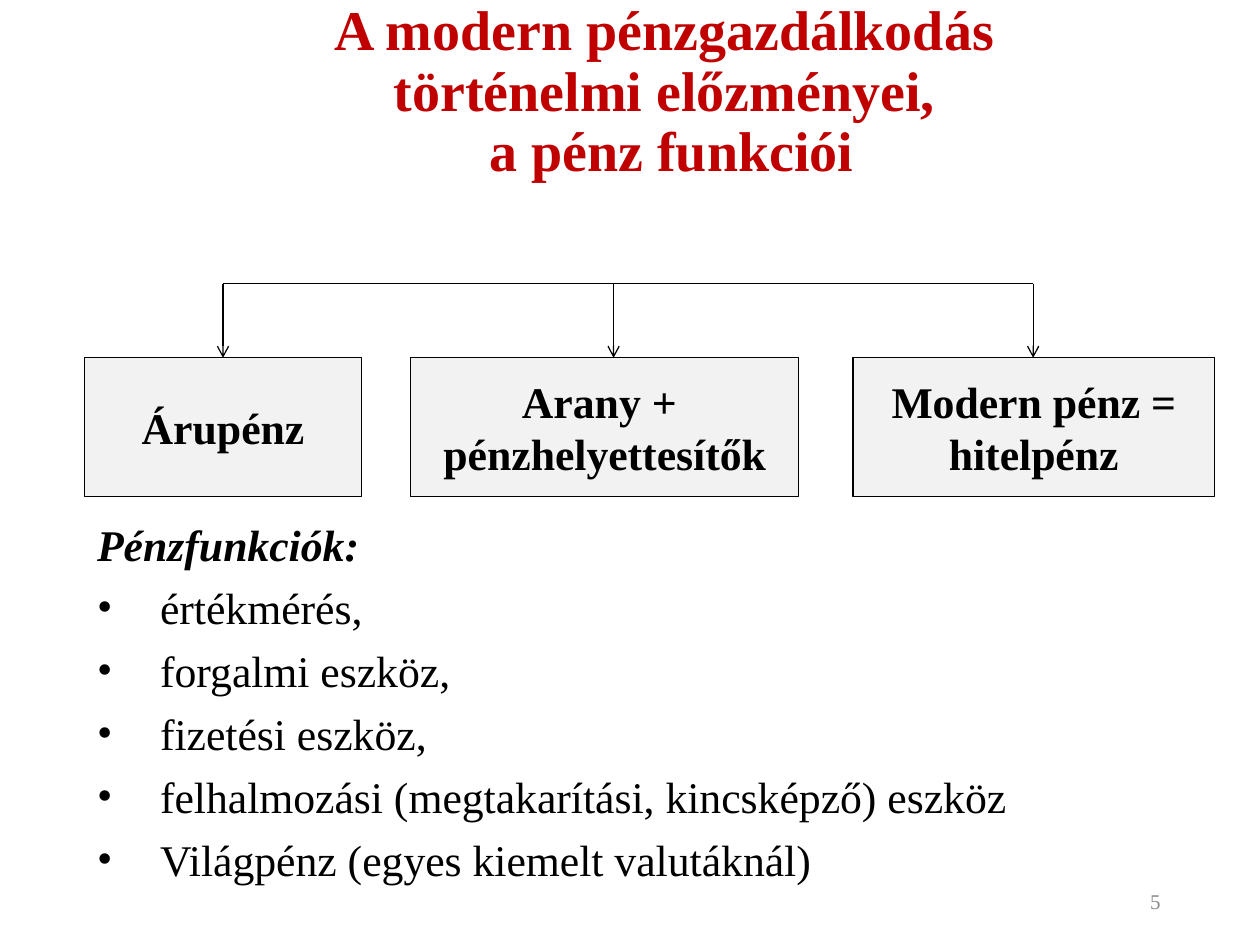
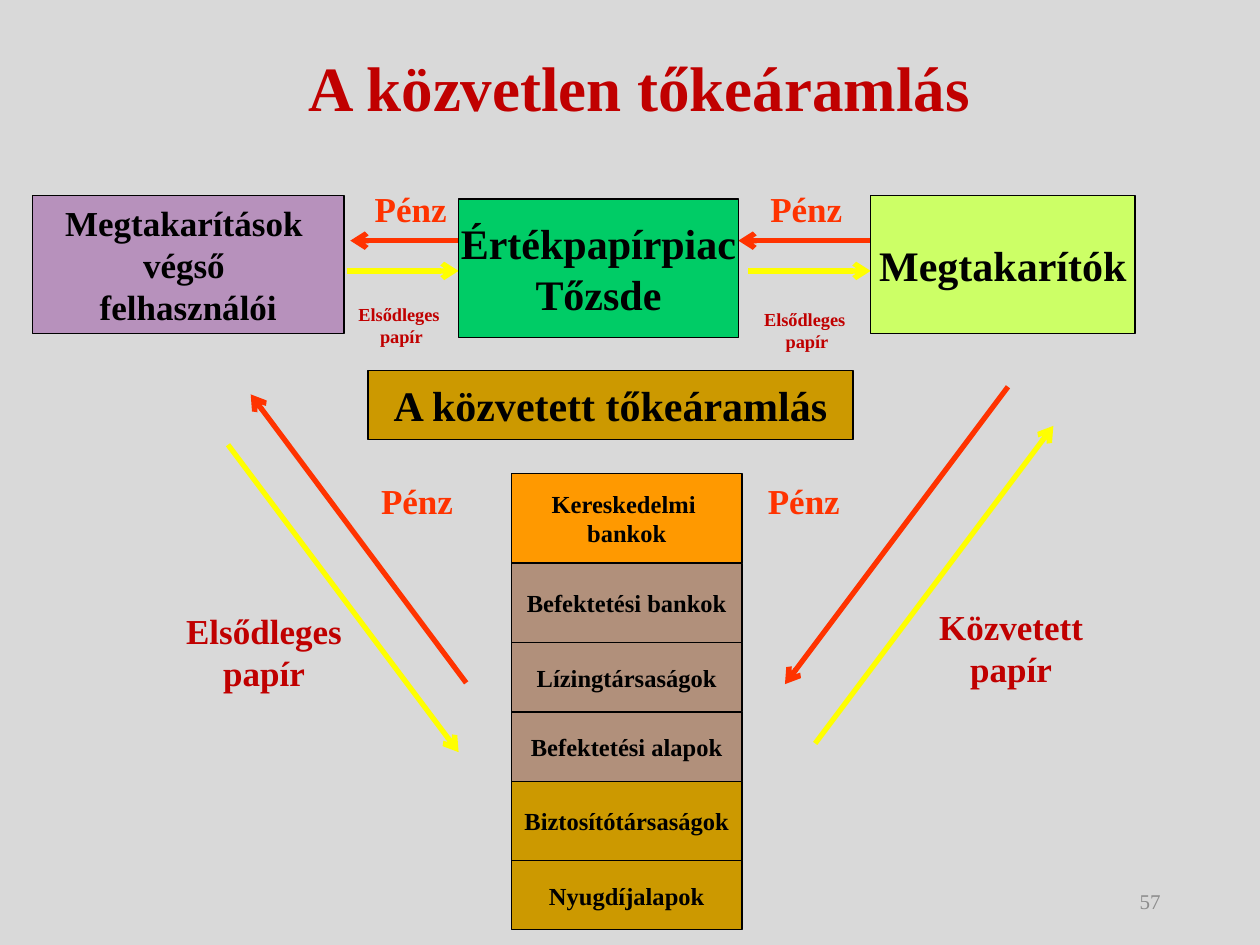
from pptx import Presentation
from pptx.dml.color import RGBColor as RGB
from pptx.enum.shapes import MSO_CONNECTOR as CONN, MSO_SHAPE as SHAPE
from pptx.enum.text import MSO_ANCHOR as ANCHOR, MSO_AUTO_SIZE as FIT, PP_ALIGN as ALIGN
from pptx.oxml.ns import qn
from pptx.util import Inches, Pt
from lxml.etree import SubElement

FONT = "Times New Roman"
COLORS = {
    "black": "000000", "white": "FFFFFF", "page": "D9D9D9", "box": "F2F2F2",
    "title": "C00000", "number": "8C8C8C", "money": "FF3300", "paper": "FFFF00",
    "users": "B791BC", "market": "00CC66", "savers": "CCFF66",
    "gold": "CC9900", "bank": "FF9900", "brown": "B1907B",
}


def add_text(s, text, box, size, color="black", fill=None, bold=True):
    """Bold centred text, in an outlined rectangle when a fill is given."""
    box = [Inches(v) for v in box]
    if fill:
        sp = s.shapes.add_shape(SHAPE.RECTANGLE, *box)
        sp.shadow.inherit = False
        sp.fill.solid()
        sp.fill.fore_color.rgb = RGB.from_string(COLORS[fill])
        sp.line.color.rgb = RGB.from_string(COLORS["black"])
        sp.line.width = Pt(0.75)
    else:
        sp = s.shapes.add_textbox(*box)
    tf = sp.text_frame
    tf.text = text
    tf.word_wrap = False
    tf.vertical_anchor = ANCHOR.MIDDLE if fill else ANCHOR.TOP
    for p in tf.paragraphs:
        p.alignment = ALIGN.CENTER
        for r in p.runs:
            r.font.name, r.font.size, r.font.bold = FONT, Pt(size), bold
            r.font.color.rgb = RGB.from_string(COLORS[color])
    return sp


def add_line(s, ends, color="black", width=0.75, arrow=True):
    cx = s.shapes.add_connector(CONN.STRAIGHT, *[Inches(v) for v in ends])
    cx.line.color.rgb = RGB.from_string(COLORS[color])
    cx.line.width = Pt(width)
    if arrow:
        SubElement(cx.line._get_or_add_ln(), qn("a:tailEnd"), type="arrow")
    SubElement(cx._element.spPr, qn("a:effectLst"))


prs = Presentation()
prs.slide_width, prs.slide_height = Inches(10), Inches(7.5)

# Shared parts: background, title and page number
pages = [
    (1, "white", "A modern pénzgazdálkodás \vtörténelmi előzményei, \va pénz funkciói",
     (0.86, 0.37, 8.94, 1.14), 32, ANCHOR.BOTTOM, "5"),
    (5, "page", "A közvetlen tőkeáramlás",
     (1.59, 0, 6.97, 1.44), 36, ANCHOR.MIDDLE, "57"),
]
for layout, back, title, box, size, anchor, number in pages:
    s = prs.slides.add_slide(prs.slide_layouts[layout])
    s.background.fill.solid()
    s.background.fill.fore_color.rgb = RGB.from_string(COLORS[back])

    sp = s.shapes.title
    sp.left, sp.top, sp.width, sp.height = [Inches(v) for v in box]
    tf = sp.text_frame
    tf.text = title
    tf.auto_size = FIT.NONE
    tf.vertical_anchor = anchor
    p = tf.paragraphs[0]
    p.alignment, p.line_spacing = ALIGN.CENTER, 0.9
    for r in p.runs:
        r.font.name, r.font.size, r.font.bold = FONT, Pt(size), True
        r.font.color.rgb = RGB.from_string(COLORS["title"])

    sp = add_text(s, number, (7.06, 6.95, 2.25, 0.4), 12, "number", bold=False)
    sp.text_frame.word_wrap = True
    sp.text_frame.vertical_anchor = ANCHOR.MIDDLE
    sp.text_frame.paragraphs[0].alignment = ALIGN.RIGHT

history, flows = prs.slides

# Slide 1: forms of money under a branching line
add_line(history, (1.77, 2.25, 8.2, 2.25), arrow=False)
forms = [
    ("Árupénz", 0.67, 2.2, 1.77),
    ("Arany + \npénzhelyettesítők", 3.26, 3.08, 4.87),
    ("Modern pénz =\nhitelpénz", 6.77, 2.87, 8.2),
]
for text, left, width, branch in forms:
    add_line(history, (branch, 2.25, branch, 2.84))
    add_text(history, text, (left, 2.84, width, 1.1), 25, fill="box")

# Slide 1: functions of money
sp = history.placeholders[1]
sp.left, sp.top, sp.width, sp.height = [Inches(v) for v in (0.67, 4.06, 7.77, 3.16)]
tf = sp.text_frame
tf.text = "\n".join([
    "Pénzfunkciók:", "értékmérés, ", "forgalmi eszköz, ", "fizetési eszköz, ",
    "felhalmozási (megtakarítási, kincsképző) eszköz",
    "Világpénz (egyes kiemelt valutáknál)",
])
tf.auto_size = FIT.NONE
for i, p in enumerate(tf.paragraphs):
    heading = i == 0
    p.alignment = ALIGN.JUSTIFY if i < 4 else ALIGN.LEFT
    p.space_before = Pt(0 if heading else 6)
    pPr = p._p.get_or_add_pPr()
    indent = 0 if heading else Inches(0.5)
    pPr.set("marL", str(indent))
    pPr.set("indent", str(-indent))
    if heading:
        SubElement(pPr, qn("a:buNone"))
    else:
        SubElement(pPr, qn("a:buFont"), typeface=FONT)
        SubElement(pPr, qn("a:buChar"), char="•")
    for r in p.runs:
        r.font.name, r.font.size = FONT, Pt(25)
        r.font.bold = r.font.italic = heading
        r.font.color.rgb = RGB.from_string(COLORS["black"])

# Slide 2: arrows of money and paper
arrows = {
    "money": [(6.93, 1.91, 5.86, 1.91), (3.81, 1.91, 2.78, 1.91),
              (8, 3.07, 6.23, 5.43), (3.7, 5.42, 1.99, 3.13)],
    "paper": [(5.94, 2.15, 6.91, 2.15), (2.75, 2.15, 3.64, 2.15),
              (6.47, 5.9, 8.36, 3.38), (1.81, 3.53, 3.64, 5.97)],
}
for color, lines in arrows.items():
    for ends in lines:
        add_line(flows, ends, color, 3)

# Slide 2: participants and the indirect flow heading
participants = [
    ("Megtakarítások \nvégső \nfelhasználói", (0.26, 1.55, 2.47, 1.1), 20, "users"),
    ("Értékpapírpiac\nTőzsde", (3.64, 1.58, 2.22, 1.1), 24, "market"),
    ("Megtakarítók", (6.91, 1.55, 2.1, 1.1), 24, "savers"),
    ("A közvetett tőkeáramlás", (2.92, 2.94, 3.85, 0.55), 24, "gold"),
]
for text, box, size, fill in participants:
    add_text(flows, text, box, size, fill=fill)

# Slide 2: stack of intermediaries
top = 3.76
intermediaries = [
    ("Kereskedelmi \nbankok", 0.71, "bank"),
    ("Befektetési bankok", 0.63, "brown"),
    ("Lízingtársaságok", 0.55, "brown"),
    ("Befektetési alapok", 0.55, "brown"),
    ("Biztosítótársaságok", 0.63, "gold"),
    ("Nyugdíjalapok", 0.55, "gold"),
]
for text, height, fill in intermediaries:
    add_text(flows, text, (4.06, top, 1.83, height), 14, fill=fill)
    top += height

# Slide 2: arrow labels
for left, y in [(2.87, 1.44), (6.01, 1.44), (2.92, 3.76), (5.99, 3.76)]:
    add_text(flows, "Pénz", (left, y, 0.78, 0.44), 20, "money")
papers = [
    ("Elsődleges \npapír", (2.74, 2.36, 0.89, 0.45), 10.5),
    ("Elsődleges \npapír", (5.96, 2.4, 0.89, 0.45), 10.5),
    ("Elsődleges\npapír", (1.37, 4.79, 1.45, 0.77), 20),
    ("Közvetett\npapír", (7.35, 4.76, 1.35, 0.77), 20),
]
for text, box, size in papers:
    add_text(flows, text, box, size, "title")

prs.save("out.pptx")
